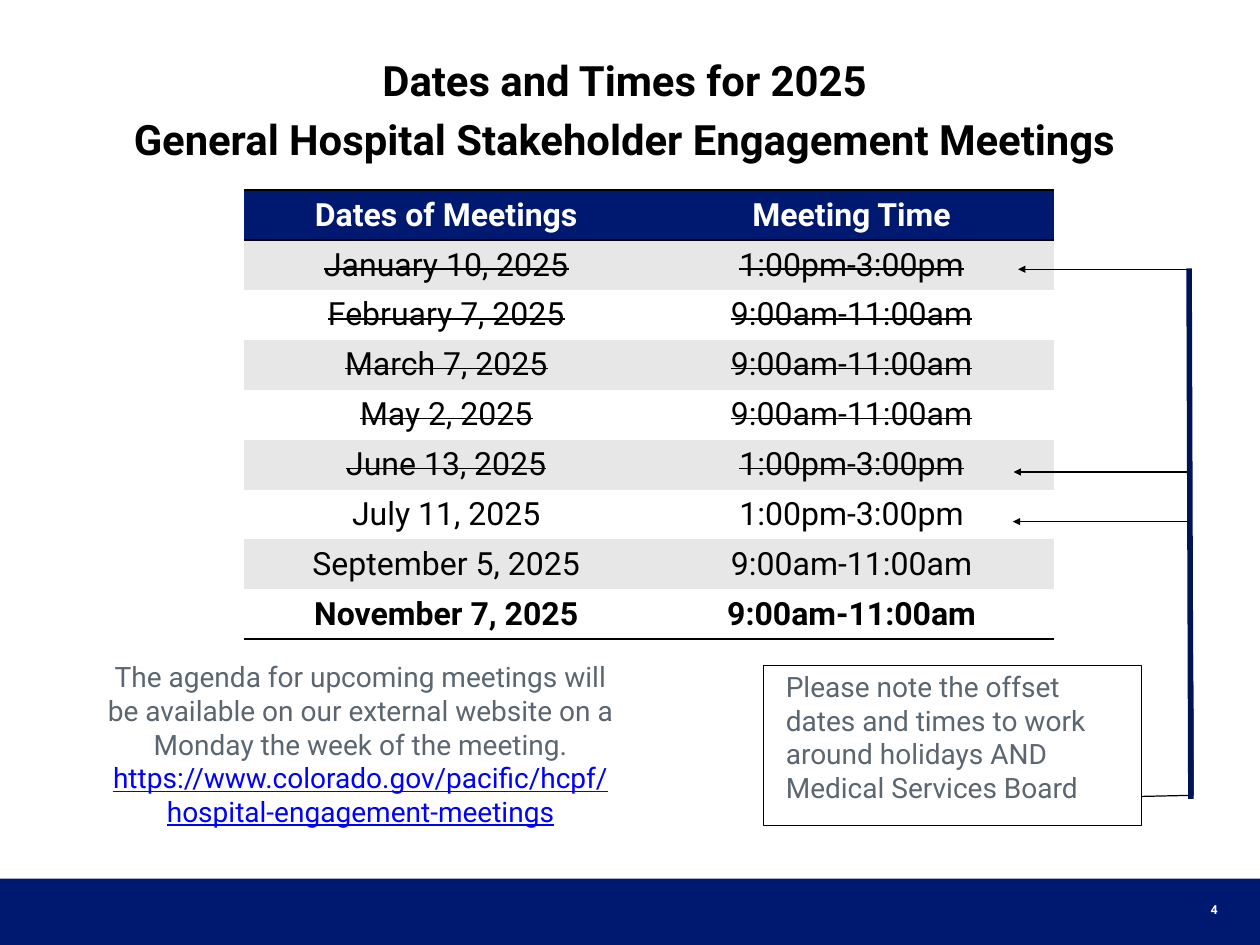
from pptx import Presentation
from pptx.dml.color import RGBColor
from pptx.enum.shapes import MSO_CONNECTOR, MSO_SHAPE
from pptx.enum.text import MSO_ANCHOR, PP_ALIGN
from pptx.oxml import parse_xml
from pptx.oxml.ns import nsdecls, qn
from pptx.oxml.xmlchemy import OxmlElement
from pptx.util import Inches, Pt

# Content
TITLE = ["Dates and Times for 2025", "General Hospital Stakeholder Engagement Meetings"]
HEADER = ("Dates of Meetings", "Meeting Time")
EARLY, LATE = "9:00am-11:00am", "1:00pm-3:00pm"
PAST_MEETINGS = [
    ("January 10, 2025", LATE),
    ("February 7, 2025", EARLY),
    ("March 7, 2025", EARLY),
    ("May 2, 2025", EARLY),
    ("June 13, 2025", LATE),
]
COMING_MEETINGS = [
    ("July 11, 2025", LATE),
    ("September 5, 2025", EARLY),
    ("November 7, 2025", EARLY),
]
AGENDA = ("The agenda for upcoming meetings will be available on our external "
          "website on a Monday the week of the meeting.")
AGENDA_ADDRESS = "https://www.colorado.gov/pacific/hcpf/hospital-engagement-meetings"
OFFSET_NOTE = ("Please note the offset dates and times to work around holidays "
               "AND Medical Services Board")
PAGE_NUMBER = "4"

# Format
FONT = "Roboto"
COLORS = {"navy": "001970", "bar": "001354", "black": "000000", "white": "FFFFFF",
          "band": "E7E7E7", "gray": "5C6670", "link": "0000FF"}
SLIDE_WIDTH, SLIDE_HEIGHT, FOOTER_HEIGHT = 14.22, 10.67, 0.75
ROW_HEIGHT = 0.54
NOTE_SIZE = 22.8

# Offset meetings: left tip and height of each arrow
BAR_X, BAR_TOP, BAR_BOTTOM = 13.42, 3.03, 9.02
ARROWS = [(11.49, 3.04), (11.44, 5.33), (11.43, 5.89)]


def color(name):
    return RGBColor.from_string(COLORS[name])


def write_text(paragraph, text, size, ink="black", bold=False, align=PP_ALIGN.CENTER,
               underline=False, strike=False):
    paragraph.alignment = align
    run = paragraph.add_run()
    run.text = text
    run.font.name = FONT
    run.font.size = Pt(size)
    run.font.bold = bold
    run.font.underline = underline
    run.font.color.rgb = color(ink)
    if strike:
        run.font._element.set("strike", "sngStrike")


def add_text_box(slide, left, top, width, height):
    box = slide.shapes.add_textbox(Inches(left), Inches(top), Inches(width), Inches(height))
    box.text_frame.word_wrap = True
    return box.text_frame


def add_border(cell, side):
    border = parse_xml(
        f'<a:{side} {nsdecls("a")} w="25400"><a:solidFill>'
        f'<a:srgbClr val="{COLORS["black"]}"/></a:solidFill></a:{side}>')
    cell._tc.get_or_add_tcPr().append(border)


def add_line(slide, start, end, ink="black", width=1, arrow=False):
    line = slide.shapes.add_connector(
        MSO_CONNECTOR.STRAIGHT, *(Inches(value) for value in (*start, *end)))
    line.line.color.rgb = color(ink)
    line.line.width = Pt(width)
    if arrow:
        tail = OxmlElement("a:tailEnd")
        tail.set("type", "triangle")
        line.line._get_or_add_ln().append(tail)
    line._element.spPr.append(OxmlElement("a:effectLst"))


def add_meeting_table(slide):
    rows = [HEADER] + PAST_MEETINGS + COMING_MEETINGS
    last = len(rows) - 1
    table = slide.shapes.add_table(
        len(rows), 2, Inches(2.75), Inches(2.15),
        Inches(9.15), Inches(ROW_HEIGHT * len(rows))).table
    # The plain style draws no grid lines
    style = table._tbl.tblPr.find(qn("a:tableStyleId"))
    style.text = "{2D5ABB26-0587-4C30-8999-92F81FD0307C}"
    for row_index, row in enumerate(rows):
        table.rows[row_index].height = Inches(ROW_HEIGHT)
        is_header = row_index == 0
        for column_index, text in enumerate(row):
            cell = table.cell(row_index, column_index)
            cell.margin_left = cell.margin_right = Inches(0.14)
            cell.margin_top = cell.margin_bottom = Inches(0.07)
            if is_header:
                add_border(cell, "lnT")
            if row_index in (0, last):
                add_border(cell, "lnB")
            cell.fill.solid()
            band = "band" if row_index % 2 else "white"
            cell.fill.fore_color.rgb = color("navy" if is_header else band)
            write_text(cell.text_frame.paragraphs[0], text, 26,
                       ink="white" if is_header else "black",
                       bold=row_index in (0, last), strike=row in PAST_MEETINGS)


def main():
    presentation = Presentation()
    presentation.slide_width = Inches(SLIDE_WIDTH)
    presentation.slide_height = Inches(SLIDE_HEIGHT)
    slide = presentation.slides.add_slide(presentation.slide_layouts[5])

    # Footer band
    footer = slide.shapes.add_shape(
        MSO_SHAPE.RECTANGLE, 0, Inches(SLIDE_HEIGHT - FOOTER_HEIGHT),
        Inches(SLIDE_WIDTH), Inches(FOOTER_HEIGHT))
    footer.shadow.inherit = False
    footer.fill.solid()
    footer.fill.fore_color.rgb = color("navy")
    footer.line.fill.background()

    # Title
    title = slide.shapes.title
    title.left, title.top = Inches(0.53), Inches(0.4)
    title.width, title.height = Inches(13.04), Inches(1.67)
    frame = title.text_frame
    frame.vertical_anchor = MSO_ANCHOR.MIDDLE
    write_text(frame.paragraphs[0], TITLE[0], 34, bold=True)
    second_line = frame.add_paragraph()
    second_line.space_before = Pt(7)
    write_text(second_line, TITLE[1], 34, bold=True)

    add_meeting_table(slide)

    # Agenda note
    frame = add_text_box(slide, 1.08, 7.4, 5.98, 2.45)
    write_text(frame.paragraphs[0], AGENDA, NOTE_SIZE, ink="gray")
    write_text(frame.add_paragraph(), AGENDA_ADDRESS, NOTE_SIZE, ink="link", underline=True)

    # Offset note: callout turned so that its leader leaves on the right
    callout = slide.shapes.add_shape(
        MSO_SHAPE.LINE_CALLOUT_3, Inches(8.62), Inches(7.51), Inches(4.26), Inches(1.81))
    callout.rotation = 180
    for index, value in enumerate((0.181, 0, 0.188, -0.137, 0.684, -0.137, 3.03, -0.128)):
        callout.adjustments[index] = value
    callout.shadow.inherit = False
    callout.fill.background()
    callout.line.color.rgb = color("black")
    callout.line.width = Pt(1)
    frame = add_text_box(slide, 8.77, 7.51, 3.99, 1.63)
    write_text(frame.paragraphs[0], OFFSET_NOTE, NOTE_SIZE, ink="gray", align=PP_ALIGN.LEFT)

    # Arrows to the offset meetings, joined by the bar
    for tip_x, tip_y in ARROWS:
        add_line(slide, (BAR_X, tip_y), (tip_x, tip_y), arrow=True)
    add_line(slide, (BAR_X, BAR_TOP), (BAR_X + 0.02, BAR_BOTTOM), ink="bar", width=4.5)

    # Page number
    frame = add_text_box(slide, 11.49, 9.99, 2.35, 0.57)
    frame.vertical_anchor = MSO_ANCHOR.MIDDLE
    write_text(frame.paragraphs[0], PAGE_NUMBER, 10.1, ink="white", bold=True,
               align=PP_ALIGN.RIGHT)

    presentation.save("out.pptx")


if __name__ == "__main__":
    main()
